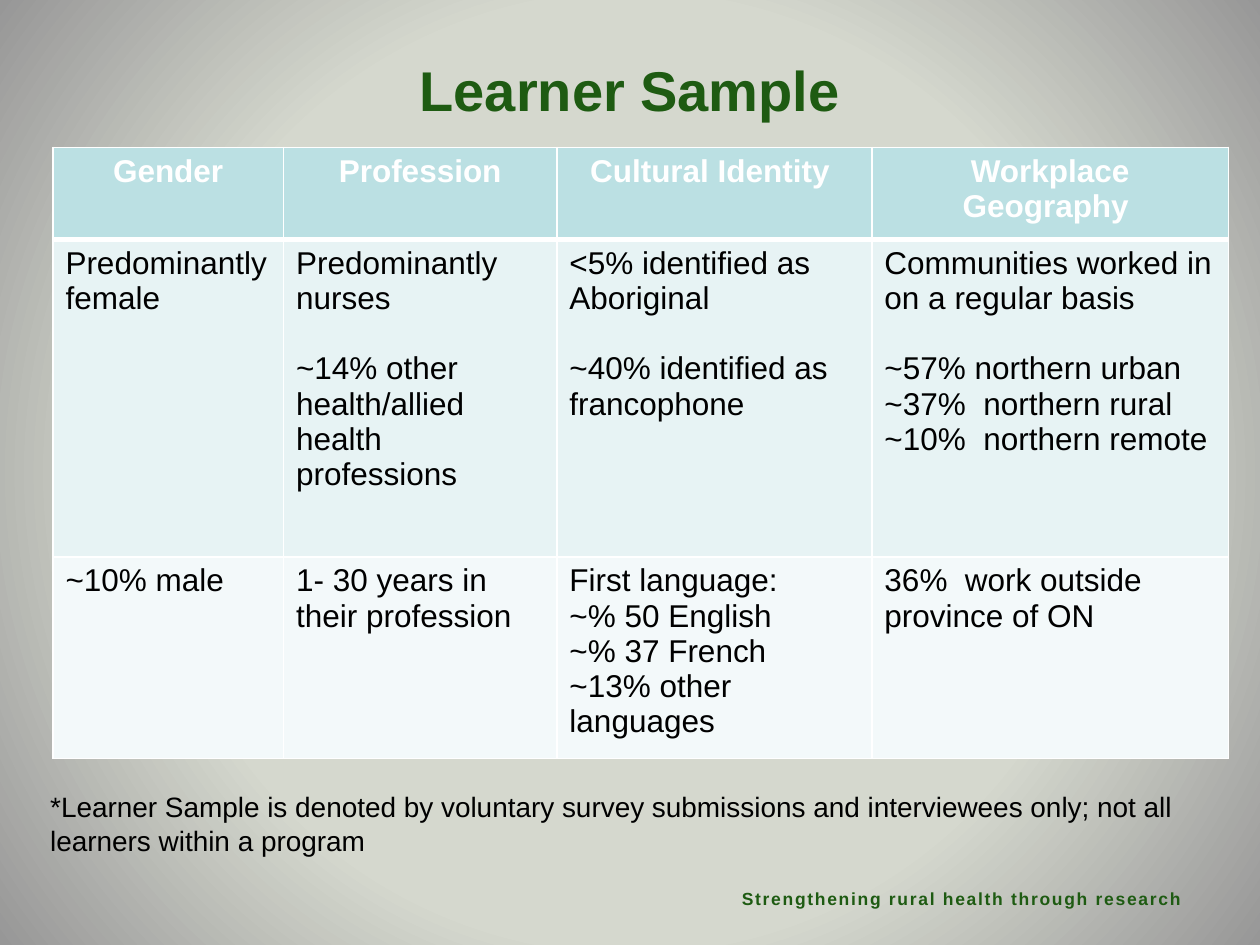
import pptx
import pptx.dml.color
import pptx.enum.text
import pptx.oxml
import pptx.oxml.ns
import pptx.util
from lxml import etree

RGBColor = pptx.dml.color.RGBColor
Inches = pptx.util.Inches
Pt = pptx.util.Pt
PP_ALIGN = pptx.enum.text.PP_ALIGN
MSO_ANCHOR = pptx.enum.text.MSO_ANCHOR
qn = pptx.oxml.ns.qn

GREEN = RGBColor(0x1E, 0x5B, 0x12)
BLACK = RGBColor(0, 0, 0)
WHITE = RGBColor(0xFF, 0xFF, 0xFF)
SAGE = RGBColor(0xD5, 0xD8, 0xCE)
GRAY = RGBColor(0x97, 0x97, 0x97)
HEADER_FILL = RGBColor(0xBB, 0xE0, 0xE3)
ROW_FILLS = [HEADER_FILL, RGBColor(0xE7, 0xF3, 0xF4), RGBColor(0xF3, 0xF9, 0xFA)]

TITLE = {"size": Pt(32), "bold": True, "color": GREEN}
HEADER = {"size": Pt(18), "bold": True, "color": WHITE}
BODY = {"size": Pt(18), "bold": False, "color": BLACK}
NOTE = {"size": Pt(16), "bold": False, "color": BLACK}
TAGLINE = {"size": Pt(10), "bold": True, "color": GREEN}

COLUMNS = [1.83, 2.17, 2.5, 2.83]
ROWS = [0.73, 2.52, 1.49]
GROUP_GAP = Pt(20)

CELLS = [
    [
        [["Gender"]],
        [["Profession"]],
        [["Cultural Identity "]],
        [["Workplace Geography "]],
    ],
    [
        [["Predominantly female"]],
        [["Predominantly nurses"], ["~14% other health/allied health professions"]],
        [["<5% identified as Aboriginal"], ["~40% identified as francophone"]],
        [
            ["Communities worked in on a regular basis"],
            ["~57% northern urban", "~37%  northern rural", "~10%  northern remote"],
        ],
    ],
    [
        [["~10% male"]],
        [["1- 30 years in their profession"]],
        [["First language:", "~% 50 English", "~% 37 French", "~13% other languages"]],
        [["36%  work outside province of ON"]],
    ],
]


class SlideBuilder:
    font_name = "Arial"

    def __init__(self, prs):
        self.s = prs.slides.add_slide(prs.slide_layouts[5])

    def background(self, inner, outer):
        fill = self.s.background.fill
        fill.gradient()
        for stop, position, color in zip(fill.gradient_stops, (0.6, 1), (inner, outer)):
            stop.position = position
            stop.color.rgb = color
        lin = self.s.element.find(".//" + qn("a:lin"))
        radial = etree.Element(qn("a:path"), path="circle")
        etree.SubElement(radial, qn("a:fillToRect"), {side: "50000" for side in "ltrb"})
        lin.getparent().replace(lin, radial)

    def run(self, p, text, fmt, align=PP_ALIGN.LEFT):
        p.alignment = align
        r = p.add_run()
        r.text = text
        r.font.name = self.font_name
        for name, value in fmt.items():
            if name == "color":
                r.font.color.rgb = value
            else:
                setattr(r.font, name, value)
        return r

    def title(self, text, left, top, width, height):
        sp = self.s.shapes.title
        sp.left, sp.top, sp.width, sp.height = map(Inches, (left, top, width, height))
        sp.text_frame.vertical_anchor = MSO_ANCHOR.MIDDLE
        self.run(sp.text_frame.paragraphs[0], text, TITLE, PP_ALIGN.CENTER)

    def text(self, text, left, top, width, height, fmt, align=PP_ALIGN.LEFT, spacing=0):
        sp = self.s.shapes.add_textbox(*map(Inches, (left, top, width, height)))
        tf = sp.text_frame
        tf.word_wrap = True
        r = self.run(tf.paragraphs[0], text, fmt, align)
        if spacing:
            r._r.get_or_add_rPr().set("spc", str(spacing * 100))

    def border(self, cell, widths):
        tcPr = cell._tc.get_or_add_tcPr()
        for i, (side, width) in enumerate(widths.items()):
            ln = etree.Element(qn("a:ln" + side), w=str(Pt(width)))
            fill = etree.SubElement(ln, qn("a:solidFill"))
            etree.SubElement(fill, qn("a:srgbClr"), val=str(WHITE))
            tcPr.insert(i, ln)

    def cell(self, cell, groups, fmt, align):
        tf = cell.text_frame
        p = tf.paragraphs[0]
        for g, group in enumerate(groups):
            for i, line in enumerate(group):
                if g or i:
                    p = tf.add_paragraph()
                if g and i == 0:
                    p.space_before = GROUP_GAP
                self.run(p, line, fmt, align)

    def table(self, left, top, columns, rows, cells):
        size = map(Inches, (left, top, sum(columns), sum(rows)))
        table = self.s.shapes.add_table(len(rows), len(columns), *size).table
        for column, width in zip(table.columns, columns):
            column.width = Inches(width)
        for i, (row, height) in enumerate(zip(table.rows, rows)):
            row.height = Inches(height)
            fmt, align = (BODY, PP_ALIGN.LEFT) if i else (HEADER, PP_ALIGN.CENTER)
            widths = {"L": 1, "R": 1, "T": 3 if i == 1 else 1, "B": 1 if i else 3}
            for cell, groups in zip(row.cells, cells[i]):
                cell.fill.solid()
                cell.fill.fore_color.rgb = ROW_FILLS[i]
                self.border(cell, widths)
                self.cell(cell, groups, fmt, align)


def main():
    prs = pptx.Presentation()
    prs.slide_width, prs.slide_height = Inches(10), Inches(7.5)
    slide = SlideBuilder(prs)
    slide.background(SAGE, GRAY)
    slide.text("Strengthening rural health through research",
               5.67, 7, 3.8, 0.27, TAGLINE, PP_ALIGN.RIGHT, spacing=1)
    slide.title("Learner Sample", 0.25, 0.25, 9.5, 0.92)
    slide.text("*Learner Sample is denoted by voluntary survey submissions and "
               "interviewees only; not all learners within a program",
               0.3, 6.22, 9.5, 0.65, NOTE)
    slide.table(0.42, 1.17, COLUMNS, ROWS, CELLS)
    prs.save("out.pptx")


if __name__ == "__main__":
    main()
